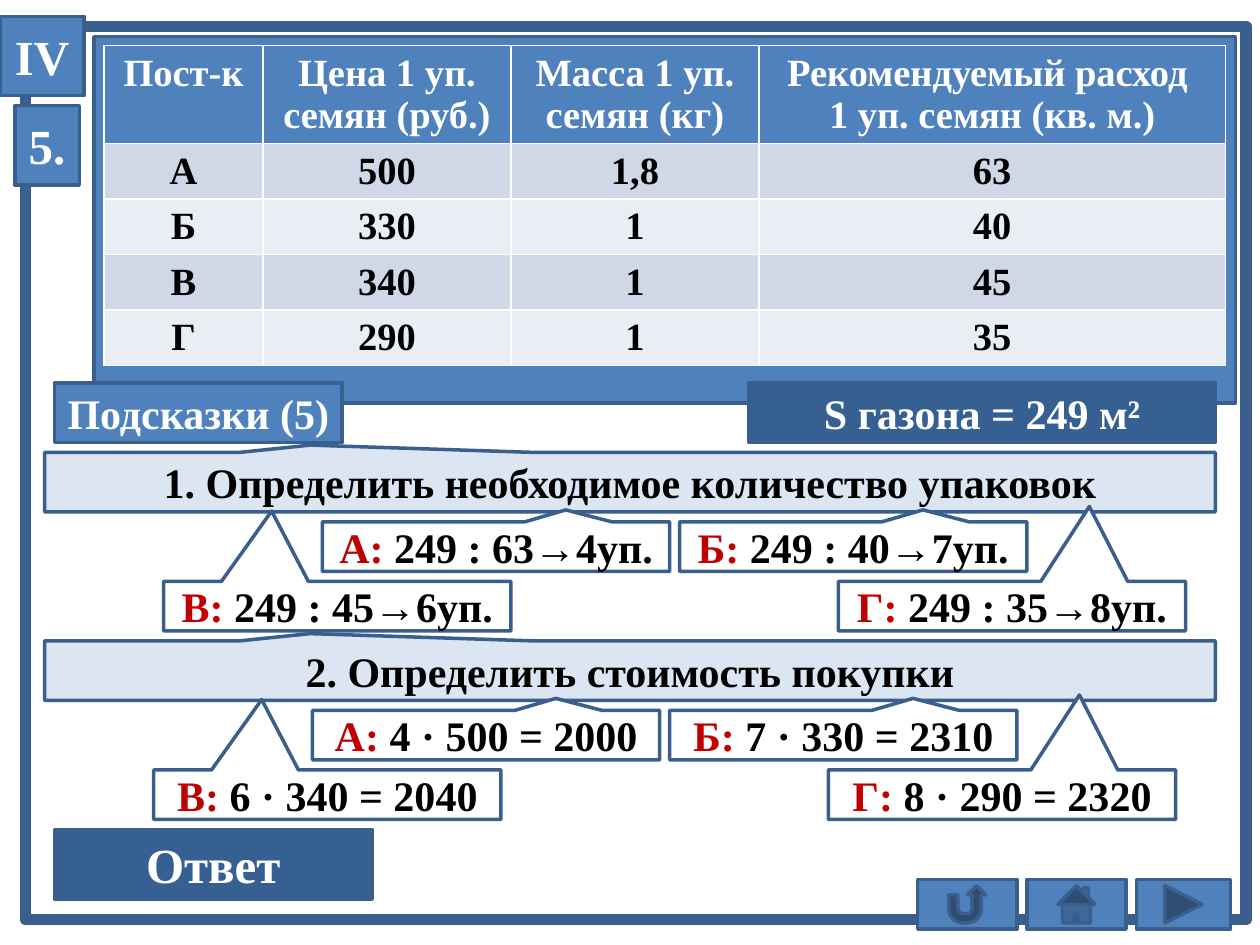
"""Build the seed-purchase task slide with its table, hints and navigation."""
from dataclasses import dataclass

import pptx
import pptx.dml.color
import pptx.enum.shapes
import pptx.enum.text
import pptx.util

Cm = pptx.util.Cm
SHAPE = pptx.enum.shapes.MSO_SHAPE


@dataclass(frozen=True)
class Theme:
    font: str = "Times New Roman"
    outline: str = "3A5F8C"
    panel: str = "4F81BD"
    dark: str = "376092"
    step: str = "DCE6F2"
    bands: tuple = ("D0D8E8", "E9EDF4")
    white: str = "FFFFFF"
    black: str = "000000"
    accent: str = "C00000"
    table_size: int = 22
    body_size: int = 24
    label_size: int = 28
    line: float = 2
    frame_line: float = 6.5


def rgb(value):
    return pptx.dml.color.RGBColor.from_string(value)


class Deck:
    def __init__(self, theme):
        self.theme = theme
        self.prs = pptx.Presentation()
        self.prs.slide_width, self.prs.slide_height = Cm(25.4), Cm(19.05)
        self.s = self.prs.slides.add_slide(self.prs.slide_layouts[6])

    def add_runs(self, p, runs, size):
        p.alignment = pptx.enum.text.PP_ALIGN.CENTER
        for text, color in runs:
            r = p.add_run()
            r.text = text
            r.font.name = self.theme.font
            r.font.size = pptx.util.Pt(size)
            r.font.bold = True
            r.font.color.rgb = rgb(color)

    def shape(self, kind, box, fill, runs=(), size=None, line=None):
        sp = self.s.shapes.add_shape(kind, *map(Cm, box))
        sp.shadow.inherit = False
        sp.fill.solid()
        sp.fill.fore_color.rgb = rgb(fill)
        sp.line.color.rgb = rgb(self.theme.outline)
        sp.line.width = pptx.util.Pt(line or self.theme.line)
        if runs:
            tf = sp.text_frame
            tf.word_wrap = True
            tf.margin_left = tf.margin_right = tf.margin_top = tf.margin_bottom = 0
            tf.vertical_anchor = pptx.enum.text.MSO_ANCHOR.MIDDLE
            self.add_runs(tf.paragraphs[0], runs, size or self.theme.body_size)
        return sp

    def callout(self, box, tip, fill, runs):
        sp = self.shape(SHAPE.RECTANGULAR_CALLOUT, box, fill, runs)
        sp.adjustments[0], sp.adjustments[1] = tip

    def table(self, left, top, widths, heights, rows):
        t = self.theme
        table = self.s.shapes.add_table(
            len(rows), len(widths), Cm(left), Cm(top), Cm(sum(widths)), Cm(sum(heights))
        ).table
        for column, width in zip(table.columns, widths):
            column.width = Cm(width)
        for i, (row, height) in enumerate(zip(rows, heights)):
            table.rows[i].height = Cm(height)
            for j, text in enumerate(row):
                cell = table.cell(i, j)
                cell.fill.solid()
                cell.fill.fore_color.rgb = rgb(t.bands[(i - 1) % 2] if i else t.panel)
                tf = cell.text_frame
                for k, part in enumerate(text.split("\n")):
                    p = tf.add_paragraph() if k else tf.paragraphs[0]
                    self.add_runs(p, [(part, t.black if i else t.white)], t.table_size)

    def save(self):
        self.prs.save("out.pptx")


def main():
    t = Theme()
    deck = Deck(t)
    rect = SHAPE.RECTANGLE

    deck.shape(rect, (0.51, 0.53, 24.61, 18.01), t.white, line=t.frame_line)
    deck.shape(rect, (1.9, 0.74, 23.01, 7.39), t.panel)
    deck.table(2.1, 0.92, (3.2, 5, 5, 9.4), (1.94, 1.12, 1.12, 1.12, 1.12), (
        ("Пост-к", "Цена 1 уп. семян (руб.)", "Масса 1 уп.\nсемян (кг)",
         "Рекомендуемый расход \n1 уп. семян (кв. м.)"),
        ("А", "500", "1,8", "63"),
        ("Б", "330", "1", "40"),
        ("В", "340", "1", "45"),
        ("Г", "290", "1", "35"),
    ))
    deck.shape(rect, (15.1, 7.72, 9.4, 1.2), t.dark, [("S газона = 249 м²", t.white)])

    for kind, left, width in (
        (SHAPE.ACTION_BUTTON_FORWARD_OR_NEXT, 22.91, 1.9),
        (SHAPE.ACTION_BUTTON_RETURN, 18.5, 2),
        (SHAPE.ACTION_BUTTON_HOME, 20.7, 2),
    ):
        deck.shape(kind, (left, 17.73, width, 1), t.panel)

    suppliers = (
        ("А: ", 6.5, 1.4, (0.201, -0.74)),
        ("Б: ", 13.7, 1.4, (0.201, -0.74)),
        ("В: ", 3.3, 2.6, (-0.189, -1.917)),
        ("Г: ", 16.9, 2.6, (0.223, -2.01)),
    )
    steps = (
        (9.12, 0, "1. Определить необходимое количество упаковок",
         ("249 : 63→4уп.", "249 : 40→7уп.", "249 : 45→6уп.", "249 : 35→8уп.")),
        (12.92, -0.2, "2. Определить стоимость покупки",
         ("4 · 500 = 2000", "7 · 330 = 2310", "6 · 340 = 2040", "8 · 290 = 2320")),
    )
    for top, shift, heading, results in steps:
        deck.callout((0.9, top, 23.6, 1.2), (-0.273, -0.622), t.step, [(heading, t.black)])
        for (name, left, drop, tip), result in zip(suppliers, results):
            deck.callout((left + shift, top + drop, 7, 1), tip, t.white,
                         [(name, t.accent), (result, t.black)])

    deck.shape(SHAPE.ACTION_BUTTON_CUSTOM, (1.1, 7.72, 5.8, 1.2), t.panel,
               [("Подсказки (5)", t.white)])
    for text, box, fill in (
        ("Ответ", (1.1, 16.72, 6.4, 1.4), t.dark),
        ("5.", (0.3, 2.13, 1.3, 1.6), t.panel),
        ("IV", (0, 0.33, 1.7, 1.6), t.panel),
    ):
        deck.shape(rect, box, fill, [(text, t.white)], t.label_size)

    deck.save()


if __name__ == "__main__":
    main()
